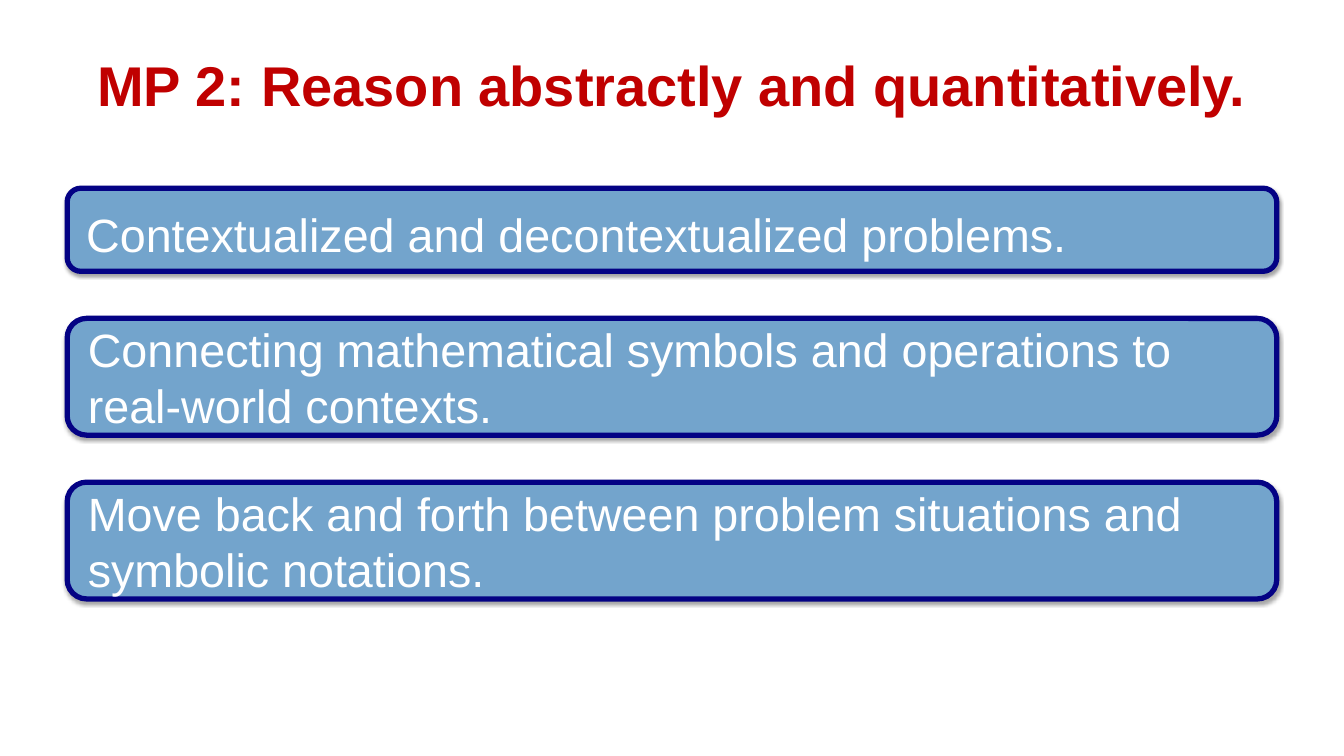
from lxml.etree import SubElement
from pptx import Presentation
from pptx.dml.color import RGBColor
from pptx.enum.shapes import MSO_SHAPE
from pptx.enum.text import MSO_ANCHOR, PP_ALIGN
from pptx.oxml.ns import qn
from pptx.util import Inches, Pt


def tint(code):
    return RGBColor.from_string(code)


class Deck:
    face = "Arial"
    red, blue, navy, white = "C00000", "73A4CC", "040284", "FFFFFF"

    def __init__(self):
        self.show = Presentation()
        self.show.slide_width = Inches(16)
        self.show.slide_height = Inches(9)
        self.slide = self.show.slides.add_slide(self.show.slide_layouts[6])

    def label(self, frame, text, size, hue, bold=False):
        frame.word_wrap = True
        para = frame.paragraphs[0]
        para.text = text
        font = para.font
        font.name, font.size, font.bold = self.face, Pt(size), bold
        font.color.rgb = tint(hue)
        return para

    def title(self, text):
        box = self.slide.shapes.add_textbox(0, Inches(0.6), Inches(16), Inches(0.81))
        frame = box.text_frame
        frame.margin_left = frame.margin_right = 0
        frame.margin_top = frame.margin_bottom = 0
        self.label(frame, text, 48, self.red, True).alignment = PP_ALIGN.CENTER

    def shade(self, shape):
        shape.shadow.inherit = False
        effects = shape._element.spPr.find(qn("a:effectLst"))
        outer = SubElement(effects, qn("a:outerShdw"), blurRad=str(Pt(3.1)),
                           dist=str(Pt(1.8)), dir="5400000", rotWithShape="0")
        black = SubElement(outer, qn("a:srgbClr"), val="000000")
        SubElement(black, qn("a:alpha"), val="35000")

    def panel(self, text, top, height, pitch):
        shape = self.slide.shapes.add_shape(
            MSO_SHAPE.ROUNDED_RECTANGLE,
            Inches(0.8), Inches(top), Inches(14.4), Inches(height))
        shape.fill.solid()
        shape.fill.fore_color.rgb = tint(self.blue)
        shape.line.color.rgb = tint(self.navy)
        shape.line.width = Pt(4.5)
        self.shade(shape)
        frame = shape.text_frame
        frame.vertical_anchor = MSO_ANCHOR.MIDDLE
        para = self.label(frame, text, 40, self.white)
        para.alignment = PP_ALIGN.LEFT
        para.line_spacing = pitch
        para._p.get_or_add_pPr().set("marL", str(Inches(0.08)))


def main():
    deck = Deck()
    deck.title("MP 2: Reason abstractly and quantitatively.")
    points = [
        ("Contextualized and decontextualized problems.", 0.99, 1.15),
        ("Connecting mathematical symbols and operations to real-world contexts.", 1.39, 1.0),
        ("Move back and forth between problem situations and symbolic notations.", 1.39, 1.0),
    ]
    top, gap = 2.24, 0.56
    for text, height, pitch in points:
        deck.panel(text, top, height, pitch)
        top += height + gap
    deck.show.save("out.pptx")


if __name__ == "__main__":
    main()
